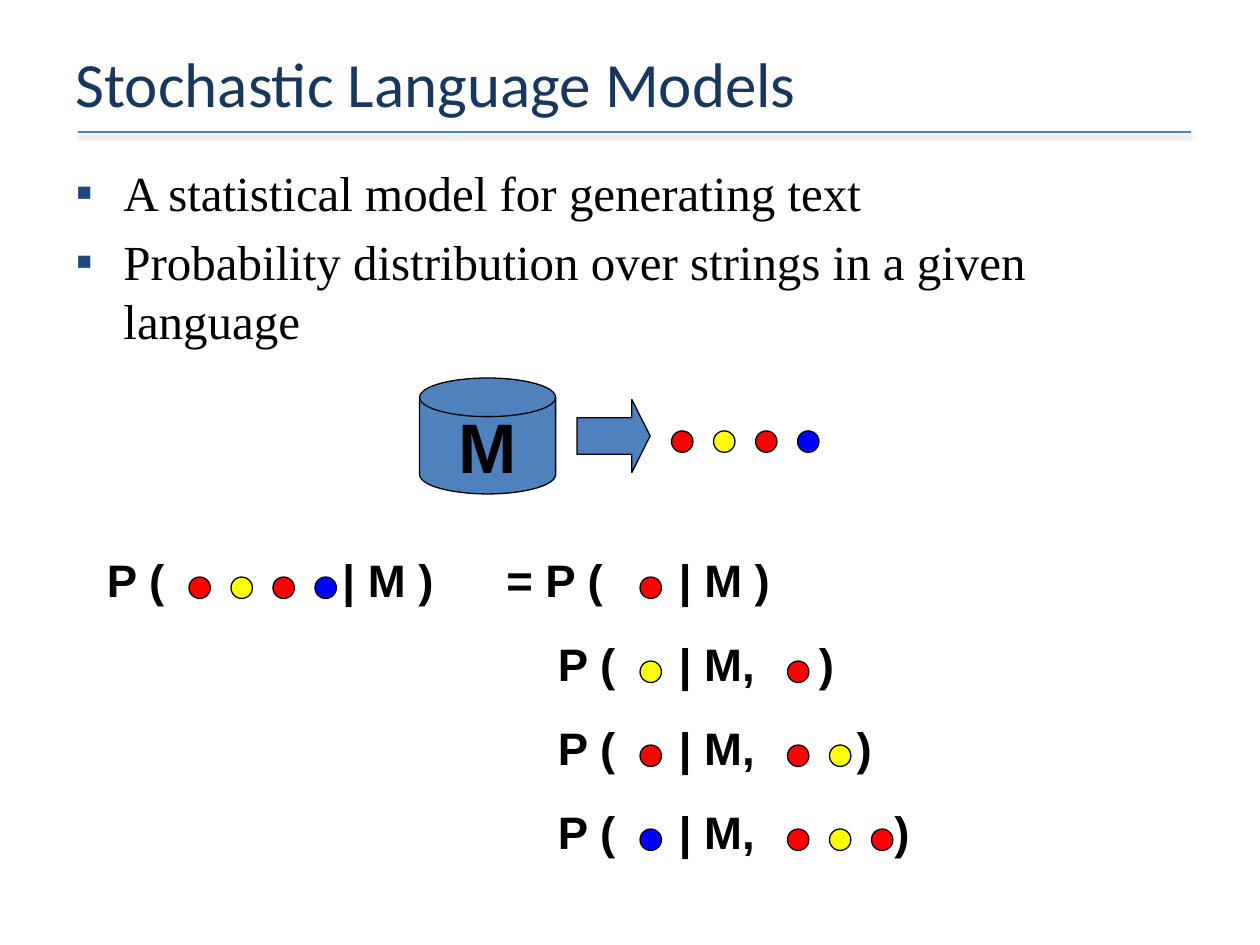
from lxml import etree
from pptx import Presentation
from pptx.dml import color as dml
from pptx.enum import shapes, text
from pptx.oxml import ns
from pptx.util import Inches, Pt

RED, YELLOW, BLUE = "FF0000", "FFFF00", "0000FF"
STEEL, BLACK = "4F81BD", "000000"
DOT_SIZE, DOT_PITCH = 0.17, 1 / 3


def rgb(value):
    return dml.RGBColor.from_string(value)


def child(parent, tag, **attributes):
    return etree.SubElement(parent, ns.qn(tag), attributes)


class SlideBuilder:
    heading_font, body_font, formula_font = "Calibri", "Times New Roman", "Arial"

    def __init__(self, slide):
        self.slide = slide

    def place(self, element, x, y, w, h):
        element.left, element.top = Inches(x), Inches(y)
        element.width, element.height = Inches(w), Inches(h)

    def run(self, paragraph, words, size, font, color=BLACK, bold=False):
        run = paragraph.add_run()
        run.text = words
        run.font.size, run.font.name, run.font.bold = Pt(size), font, bold
        run.font.color.rgb = rgb(color)

    def title(self, words, *box):
        heading = self.slide.shapes.title
        self.place(heading, *box)
        frame = heading.text_frame
        frame.auto_size = text.MSO_AUTO_SIZE.NONE
        frame.vertical_anchor = text.MSO_ANCHOR.MIDDLE
        frame.paragraphs[0].alignment = text.PP_ALIGN.LEFT
        self.run(frame.paragraphs[0], words, 36, self.heading_font, "17375E")

    def bullets(self, items, *box):
        body = self.slide.placeholders[1]
        self.place(body, *box)
        frame = body.text_frame
        frame.auto_size = text.MSO_AUTO_SIZE.NONE
        for index, item in enumerate(items):
            paragraph = frame.add_paragraph() if index else frame.paragraphs[0]
            props = paragraph._p.get_or_add_pPr()
            props.set("marL", str(Inches(0.38)))
            props.set("indent", str(Inches(-0.38)))
            child(child(props, "a:buClr"), "a:srgbClr", val="1F497D")
            child(props, "a:buFont", typeface="Arial")
            child(props, "a:buChar", char="▪")
            self.run(paragraph, item, 28, self.body_font)

    def rule(self, x1, x2, y):
        line = self.slide.shapes.add_connector(
            shapes.MSO_CONNECTOR.STRAIGHT, Inches(x1), Inches(y), Inches(x2), Inches(y))
        line.line.color.rgb = rgb(STEEL)
        line.line.width = Pt(1)
        effects = child(line._element.spPr, "a:effectLst")
        shadow = child(effects, "a:outerShdw", blurRad=str(Pt(3.1)), dist=str(Pt(1.6)),
                       dir="5400000", rotWithShape="0")
        child(child(shadow, "a:srgbClr", val=BLACK), "a:alpha", val="38000")

    def shape(self, kind, fill, x, y, w, h, parent=None):
        shape = (parent or self.slide).shapes.add_shape(
            kind, Inches(x), Inches(y), Inches(w), Inches(h))
        shape.shadow.inherit = False
        shape.fill.solid()
        shape.fill.fore_color.rgb = rgb(fill)
        shape.line.color.rgb = rgb(BLACK)
        shape.line.width = Pt(0.75)
        return shape

    def model(self, label, *box):
        disk = self.shape(shapes.MSO_SHAPE.FLOWCHART_MAGNETIC_DISK, STEEL, *box)
        frame = disk.text_frame
        frame.word_wrap = False
        frame.vertical_anchor = text.MSO_ANCHOR.MIDDLE
        paragraph = frame.paragraphs[0]
        paragraph.alignment = text.PP_ALIGN.CENTER
        paragraph.space_before = Pt(6)
        self.run(paragraph, label, 40, self.formula_font, bold=True)

    def arrow(self, *box):
        arrow = self.shape(shapes.MSO_SHAPE.RIGHT_ARROW, STEEL, *box)
        arrow.adjustments[0], arrow.adjustments[1] = 0.5, 0.25

    def dots(self, colors, x, y, parent=None):
        for index, color in enumerate(colors):
            self.shape(shapes.MSO_SHAPE.OVAL, color, x + index * DOT_PITCH, y,
                       DOT_SIZE, DOT_SIZE, parent)

    def formula(self, words, tabs, x, y, w, dot_rows):
        group = self.slide.shapes.add_group_shape()
        box = group.shapes.add_textbox(Inches(x), Inches(y), Inches(w), Inches(0.58))
        box.text_frame.word_wrap = True
        paragraph = box.text_frame.paragraphs[0]
        paragraph.space_before = Pt(4)
        stops = child(paragraph._p.get_or_add_pPr(), "a:tabLst")
        for tab in tabs:
            child(stops, "a:tab", pos=str(Inches(tab)), algn="l")
        self.run(paragraph, words, 26, self.formula_font, bold=True)
        for dot_x, colors in dot_rows:
            self.dots(colors, dot_x, y + 0.25, group)


def main():
    deck = Presentation()
    deck.slide_width, deck.slide_height = Inches(10), Inches(7.5)
    page = SlideBuilder(deck.slides.add_slide(deck.slide_layouts[1]))
    page.rule(0.62, 9.45, 1.05)
    page.title("Stochastic Language Models", 0.5, 0.3, 9, 0.71)
    page.bullets(["A statistical model for generating text",
                  "Probability distribution over strings in a given language"],
                 0.5, 1.24, 8.5, 1.8)

    sequence = [RED, YELLOW, RED, BLUE]
    page.model("M", 3.33, 3, 1.08, 0.92)
    page.arrow(4.58, 3.17, 0.58, 0.58)
    page.dots(sequence, 5.33, 3.42)

    first_row, row_pitch = 4.33, 2 / 3
    next_x, history_x = 5.08, 6.25
    page.formula("P (\t| M )", [1.87], 0.75, first_row, 3.17, [(1.5, sequence)])
    page.formula("= P (\t| M )", [1.37], 3.92, first_row, 2.42, [(next_x, sequence[:1])])
    for step in range(1, len(sequence)):
        page.formula("P (\t| M,\t)", [0.96, 1.77 + 0.3 * step],
                     4.33, first_row + step * row_pitch, 3.17,
                     [(next_x, [sequence[step]]), (history_x, sequence[:step])])
    deck.save("out.pptx")


if __name__ == "__main__":
    main()
